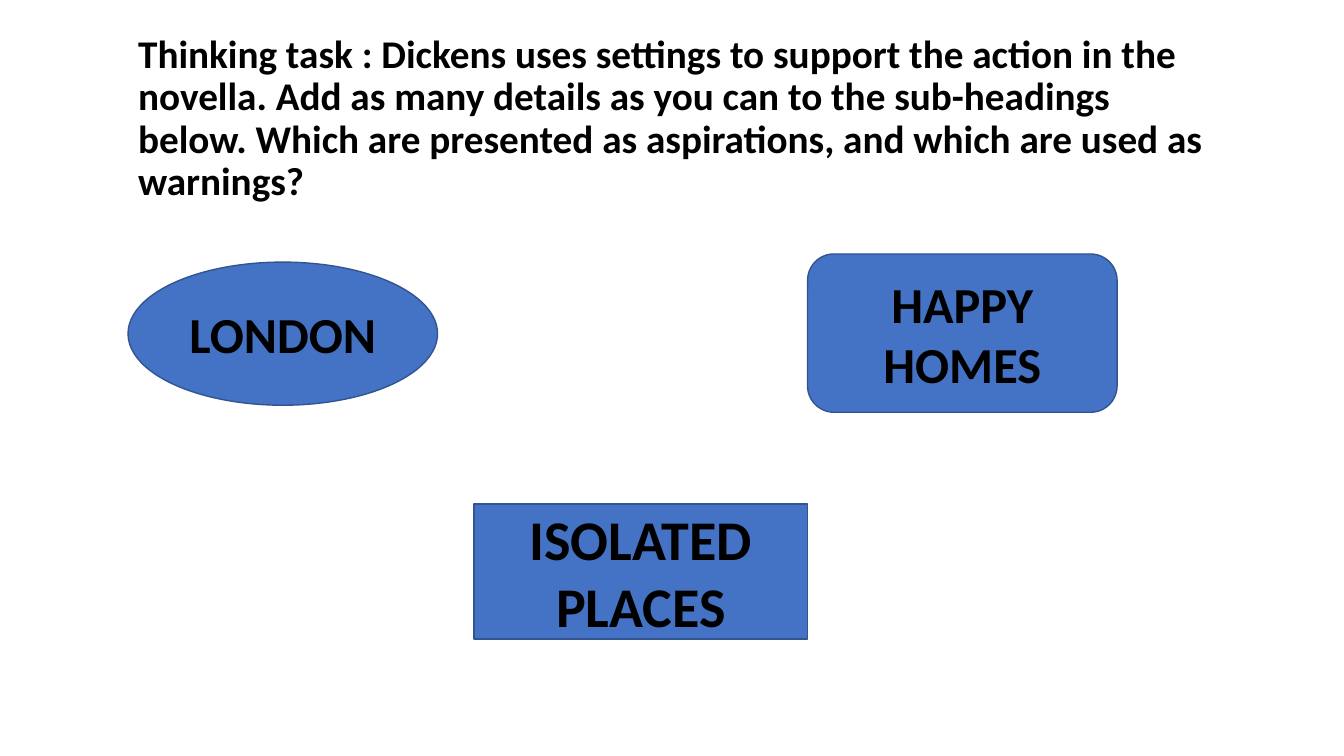
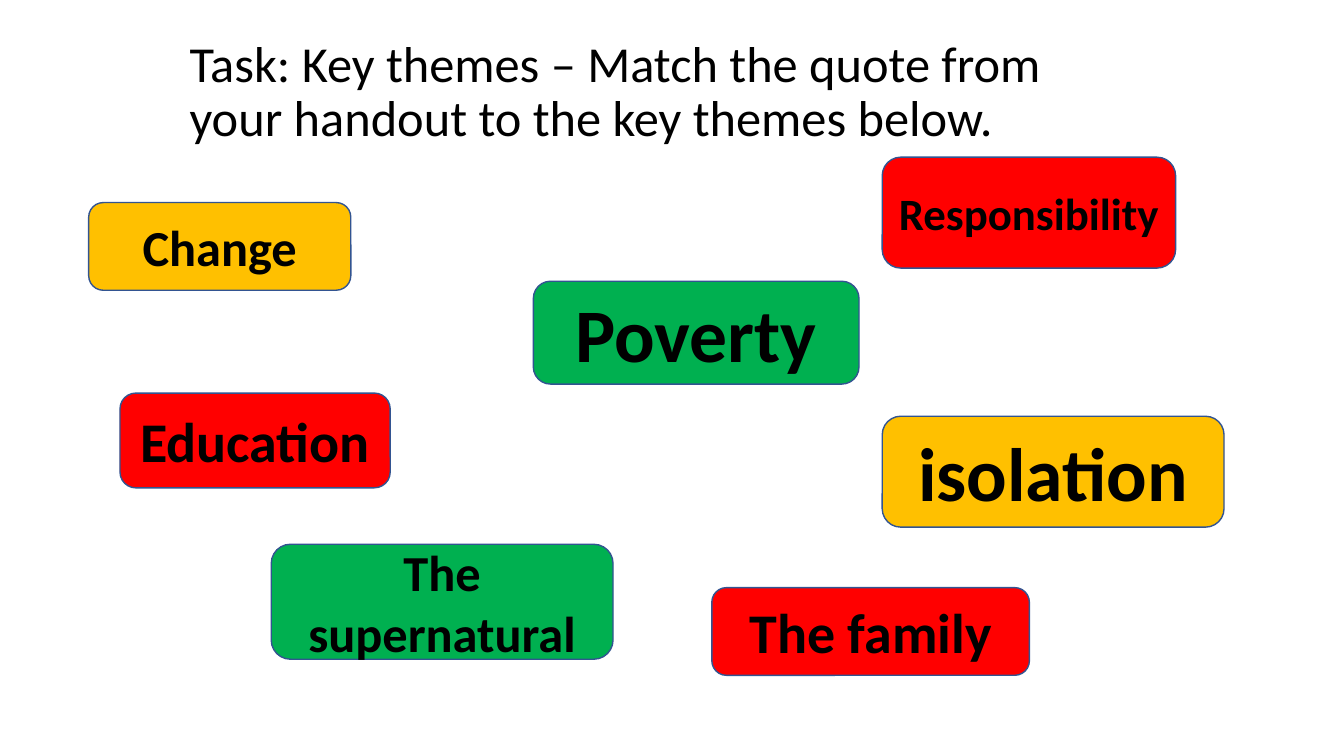
"""Build two discussion slides on the settings and themes of a Dickens novella."""
from pptx import Presentation
from pptx.dml.color import RGBColor
from pptx.enum.shapes import MSO_SHAPE
from pptx.enum.text import MSO_ANCHOR, MSO_AUTO_SIZE, PP_ALIGN
from pptx.util import Emu, Pt

PX = 9144
FONT = "Calibri"
COLORS = {
    "text": "000000",
    "outline": "325491",
    "blue": "4472C4",
    "amber": "FFC000",
    "red": "FF0000",
    "green": "00B050",
}
OVAL = MSO_SHAPE.OVAL
RECT = MSO_SHAPE.RECTANGLE
ROUND = MSO_SHAPE.ROUNDED_RECTANGLE
MIDDLE = MSO_ANCHOR.MIDDLE
LEFT, CENTER = PP_ALIGN.LEFT, PP_ALIGN.CENTER
NO_FIT = MSO_AUTO_SIZE.NONE

SLIDES = [
    {
        "title": "Thinking task : Dickens uses settings to support the action in the "
                 "novella. Add as many details as you can to the sub-headings below. "
                 "Which are presented as aspirations, and which are used as warnings?",
        "box": (127, 17, 1078, 203), "size": 28, "bold": True,
        "labels": [
            ("LONDON", OVAL, "blue", 36, (127, 260, 307, 142)),
            ("ISOLATED PLACES", RECT, "blue", 40, (470, 500, 331, 134)),
            ("HAPPY HOMES", ROUND, "blue", 36, (801, 252, 307, 157)),
        ],
    },
    {
        "title": "Task: Key themes – Match the quote from your handout to the key "
                 "themes below.",
        "box": (178, 30, 906, 125), "size": 36, "bold": False,
        "labels": [
            ("Change", ROUND, "amber", 36, (88, 201, 260, 87)),
            ("Responsibility", ROUND, "red", 32, (875, 156, 291, 110)),
            ("Education", ROUND, "red", 40, (119, 390, 268, 94)),
            ("Poverty", ROUND, "green", 54, (529, 279, 323, 102)),
            ("The supernatural", ROUND, "green", 36, (269, 540, 339, 114)),
            ("isolation", ROUND, "amber", 54, (875, 413, 339, 110)),
            ("The family", ROUND, "red", 40, (706, 583, 315, 87)),
        ],
    },
]


def rgb(name):
    return RGBColor.from_string(COLORS[name])


def write(sp, text, size, bold, align):
    tf = sp.text_frame
    tf.word_wrap = True
    tf.auto_size = NO_FIT
    tf.vertical_anchor = MIDDLE
    p = tf.paragraphs[0]
    p.alignment = align
    r = p.add_run()
    r.text = text
    r.font.name = FONT
    r.font.size = Pt(size)
    r.font.bold = bold
    r.font.color.rgb = rgb("text")
    return p


prs = Presentation()
prs.slide_width, prs.slide_height = Emu(1333 * PX), Emu(750 * PX)

for content in SLIDES:
    s = prs.slides.add_slide(prs.slide_layouts[5])
    title = s.shapes.title
    title.left, title.top, title.width, title.height = [Emu(v * PX) for v in content["box"]]
    p = write(title, content["title"], content["size"], content["bold"], LEFT)
    p.line_spacing = 0.9

    for text, kind, color, size, box in content["labels"]:
        sp = s.shapes.add_shape(kind, *[Emu(v * PX) for v in box])
        sp.shadow.inherit = False
        sp.fill.solid()
        sp.fill.fore_color.rgb = rgb(color)
        sp.line.color.rgb = rgb("outline")
        sp.line.width = Pt(1)
        write(sp, text, size, True, CENTER)

prs.save("out.pptx")
